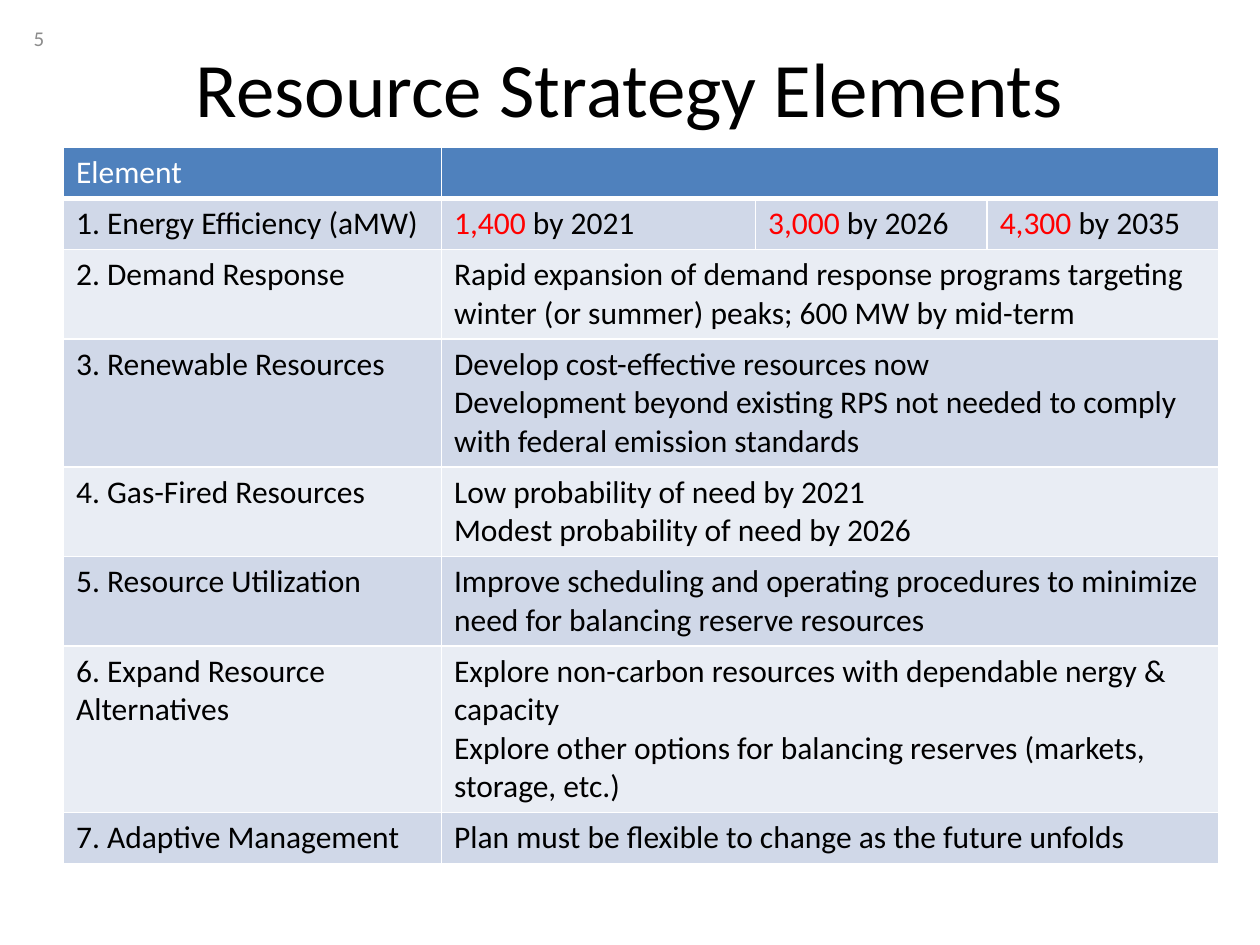
from lxml.etree import SubElement
from pptx import Presentation
from pptx.dml.color import RGBColor
from pptx.enum.text import MSO_ANCHOR, PP_ALIGN
from pptx.oxml.ns import qn
from pptx.util import Cm, Pt

FONT = "Calibri"
BLACK = RGBColor(0x00, 0x00, 0x00)
WHITE = RGBColor(0xFF, 0xFF, 0xFF)
RED = RGBColor(0xFF, 0x00, 0x00)
GRAY = RGBColor(0x8C, 0x8C, 0x8C)
HEADER_BLUE = RGBColor(0x4F, 0x81, 0xBD)
BAND_DARK = RGBColor(0xD0, 0xD8, 0xE8)
BAND_LIGHT = RGBColor(0xE9, 0xED, 0xF4)

COLUMN_WIDTHS = [Cm(7.62), Cm(6.33), Cm(4.67), Cm(4.67)]
ROW_HEIGHT = Cm(1.03)
EFFICIENCY_ROW = 1
EFFICIENCY_GOALS = [("1,400", "2021"), ("3,000", "2026"), ("4,300", "2035")]

# Each row: element, then the paragraphs of the cell that spans the other columns
ROWS = [
    ("Element", []),
    ("1. Energy Efficiency (aMW)", []),
    ("2. Demand Response", [
        "Rapid expansion of demand response programs targeting winter "
        "(or summer) peaks; 600 MW by mid-term"]),
    ("3. Renewable Resources", [
        "Develop cost-effective resources now",
        "Development beyond existing RPS not needed to comply with "
        "federal emission standards"]),
    ("4. Gas-Fired Resources", [
        "Low probability of need by 2021",
        "Modest probability of need by 2026"]),
    ("5. Resource Utilization", [
        "Improve scheduling and operating procedures to minimize need "
        "for balancing reserve resources"]),
    ("6. Expand Resource Alternatives", [
        "Explore non-carbon resources with dependable nergy & capacity",
        "Explore other options for balancing reserves (markets, storage, etc.)"]),
    ("7. Adaptive Management", [
        "Plan must be flexible to change as the future unfolds"]),
]


def add_text(p, text, size=18, color=BLACK):
    r = p.add_run()
    r.text = text
    r.font.name = FONT
    r.font.size = Pt(size)
    r.font.bold = False
    r.font.color.rgb = color


def write_paragraphs(tf, texts, **fmt):
    for i, text in enumerate(texts):
        p = tf.add_paragraph() if i else tf.paragraphs[0]
        add_text(p, text, **fmt)


def add_title(slide, text):
    sp = slide.shapes.title
    sp.left, sp.top, sp.width, sp.height = Cm(1.27), Cm(0.43), Cm(22.86), Cm(2.62)
    tf = sp.text_frame
    tf.vertical_anchor = MSO_ANCHOR.MIDDLE
    p = tf.paragraphs[0]
    p.alignment = PP_ALIGN.CENTER
    add_text(p, text, size=44)


def add_slide_number(slide, text):
    sp = slide.shapes.add_textbox(Cm(0.43), Cm(0.25), Cm(5.92), Cm(1.02))
    tf = sp.text_frame
    tf.word_wrap = True
    tf.vertical_anchor = MSO_ANCHOR.MIDDLE
    add_text(tf.paragraphs[0], text, size=12, color=GRAY)


def style_cell(cell, fill, bottom=1):
    """Draw white borders, widths in points, then fill the cell."""
    tc_pr = cell._tc.get_or_add_tcPr()
    for tag, width in (("lnL", 1), ("lnR", 1), ("lnT", 1), ("lnB", bottom)):
        ln = SubElement(tc_pr, qn(f"a:{tag}"), w=str(Pt(width)))
        SubElement(SubElement(ln, qn("a:solidFill")), qn("a:srgbClr"), val=str(WHITE))
    cell.fill.solid()
    cell.fill.fore_color.rgb = fill


def add_strategy_table(slide):
    table = slide.shapes.add_table(
        len(ROWS), len(COLUMN_WIDTHS), Cm(1.28), Cm(2.97),
        sum(COLUMN_WIDTHS), ROW_HEIGHT * len(ROWS)).table
    for column, width in zip(table.columns, COLUMN_WIDTHS):
        column.width = width

    for i, (element, details) in enumerate(ROWS):
        is_header = i == 0
        table.rows[i].height = ROW_HEIGHT
        band = BAND_DARK if i % 2 else BAND_LIGHT
        for cell in table.rows[i].cells:
            style_cell(cell, HEADER_BLUE if is_header else band,
                       bottom=3 if is_header else 1)
        write_paragraphs(table.cell(i, 0).text_frame, [element],
                         color=WHITE if is_header else BLACK)
        if i != EFFICIENCY_ROW:
            table.cell(i, 1).merge(table.cell(i, len(COLUMN_WIDTHS) - 1))
            write_paragraphs(table.cell(i, 1).text_frame, details)

    for col, (amount, year) in enumerate(EFFICIENCY_GOALS, start=1):
        p = table.cell(EFFICIENCY_ROW, col).text_frame.paragraphs[0]
        add_text(p, amount, color=RED)
        add_text(p, f" by {year}")


def main():
    prs = Presentation()
    prs.slide_width, prs.slide_height = Cm(25.4), Cm(19.05)
    slide = prs.slides.add_slide(prs.slide_layouts[5])
    add_title(slide, "Resource Strategy Elements")
    add_strategy_table(slide)
    add_slide_number(slide, "5")
    prs.save("out.pptx")


if __name__ == "__main__":
    main()
